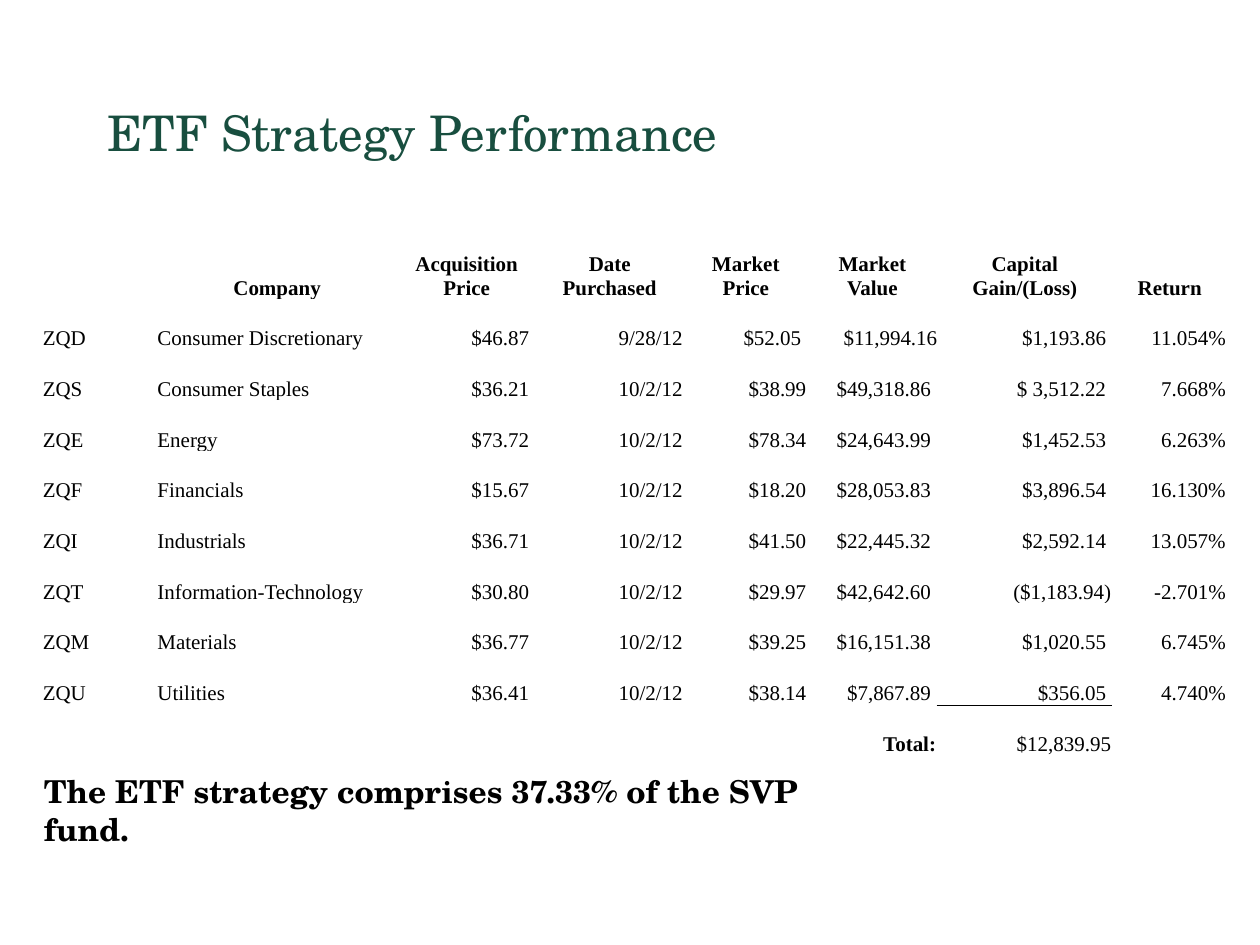
from lxml import etree
from pptx import Presentation
from pptx.dml.color import RGBColor
from pptx.enum.text import MSO_ANCHOR, MSO_AUTO_SIZE, PP_ALIGN
from pptx.oxml import parse_xml
from pptx.oxml.ns import nsdecls
from pptx.util import Inches, Pt

LEFT, CENTER, RIGHT = PP_ALIGN.LEFT, PP_ALIGN.CENTER, PP_ALIGN.RIGHT
MIDDLE, BOTTOM = MSO_ANCHOR.MIDDLE, MSO_ANCHOR.BOTTOM
FIT = MSO_AUTO_SIZE.SHAPE_TO_FIT_TEXT
GREEN = RGBColor(0x18, 0x4E, 0x3F)
BLACK = RGBColor(0, 0, 0)

WIDTHS = [0.91, 1.92, 1.09, 1.18, 0.98, 1.03, 1.39, 0.91]
ALIGNS = [LEFT, LEFT] + [RIGHT] * 6
PADS = [0.01, 0.01, 0.05, 0.01, 0.01, 0.05, 0.05, 0.01]
ODD_PADS = {(1, 4): 0.05, (1, 5): 0, (6, 6): 0.01, (9, 5): 0.01, (9, 6): 0.01}
HEAD = ["", "Company", "Acquisition\nPrice", "Date\nPurchased", "Market\nPrice",
        "Market\nValue", "Capital Gain/(Loss)", "Return"]
FUNDS = [
    ["ZQD", "Consumer Discretionary", "$46.87", "9/28/12", "$52.05", "$11,994.16", "$1,193.86", "11.054%"],
    ["ZQS", "Consumer Staples", "$36.21", "10/2/12", "$38.99", "$49,318.86", "$ 3,512.22", "7.668%"],
    ["ZQE", "Energy", "$73.72", "10/2/12", "$78.34", "$24,643.99", "$1,452.53", "6.263%"],
    ["ZQF", "Financials", "$15.67", "10/2/12", "$18.20", "$28,053.83", "$3,896.54", "16.130%"],
    ["ZQI", "Industrials", "$36.71", "10/2/12", "$41.50", "$22,445.32", "$2,592.14", "13.057%"],
    ["ZQT", "Information-Technology", "$30.80", "10/2/12", "$29.97", "$42,642.60", "($1,183.94)", "-2.701%"],
    ["ZQM", "Materials", "$36.77", "10/2/12", "$39.25", "$16,151.38", "$1,020.55", "6.745%"],
    ["ZQU", "Utilities", "$36.41", "10/2/12", "$38.14", "$7,867.89", "$356.05", "4.740%"],
]
TOTAL = ["", "", "", "", "", "Total:", "$12,839.95", ""]


class Deck:
    serif = "TeX Gyre Schola"
    roman = "Times New Roman"

    def __init__(self, show):
        self.slide = show.slides.add_slide(show.slide_layouts[5])

    def style(self, frame, font, size, color, bold=False, align=LEFT):
        for para in frame.paragraphs:
            para.alignment = align
            for run in para.runs:
                run.font.name = font
                run.font.size = Pt(size)
                run.font.bold = bold
                run.font.color.rgb = color

    def title(self, text, box):
        shape = self.slide.shapes.title
        shape.left, shape.top, shape.width, shape.height = map(Inches, box)
        shape.text_frame.text = text
        shape.text_frame.vertical_anchor = MIDDLE
        self.style(shape.text_frame, self.serif, 28, GREEN)

    def note(self, text, box):
        frame = self.slide.shapes.add_textbox(*map(Inches, box)).text_frame
        frame.word_wrap = True
        frame.auto_size = FIT
        frame.text = text
        self.style(frame, self.serif, 18, BLACK, True)

    def cell(self, cell, text, bold, align, pad):
        cell.fill.background()
        cell.vertical_anchor = BOTTOM
        cell.margin_left = cell.margin_top = Inches(0.01)
        cell.margin_right, cell.margin_bottom = Inches(pad), 0
        cell.text_frame.text = text
        self.style(cell.text_frame, self.roman, 12, BLACK, bold, align)

    def rule(self, cell, side):
        line = parse_xml(f'<a:{side} {nsdecls("a")} w="{Pt(0.5)}"/>')
        fill = etree.SubElement(line, line.tag.replace(side, "solidFill"))
        etree.SubElement(fill, line.tag.replace(side, "srgbClr"), val=str(BLACK))
        cell._tc.get_or_add_tcPr().insert(0, line)

    def table(self, rows, box):
        grid = self.slide.shapes.add_table(len(rows), len(WIDTHS), *map(Inches, box)).table
        grid.first_row = grid.horz_banding = False
        for col, width in zip(grid.columns, WIDTHS):
            col.width = Inches(width)
        for r, row in enumerate(rows):
            grid.rows[r].height = Inches(3.62 / 9 if r else 0.96)
            for c, text in enumerate(row):
                bold = r == 0 or text == "Total:"
                align = ALIGNS[c] if r else CENTER
                pad = ODD_PADS.get((r, c), PADS[c]) if r else 0.01
                self.cell(grid.cell(r, c), text, bold, align, pad)
        last = len(rows) - 1
        self.rule(grid.cell(last - 1, 6), "lnB")
        self.rule(grid.cell(last, 6), "lnT")


def main():
    show = Presentation()
    show.slide_width, show.slide_height = Inches(10), Inches(7.5)
    deck = Deck(show)
    deck.title("ETF Strategy Performance", (0.75, 0.42, 8.5, 1.25))
    deck.table([HEAD, *FUNDS, TOTAL], (0.33, 1.42, 9.42, 4.58))
    deck.note("The ETF strategy comprises 37.33% of the SVP fund.", (0.25, 6.08, 6.5, 0.71))
    show.save("out.pptx")


if __name__ == "__main__":
    main()
